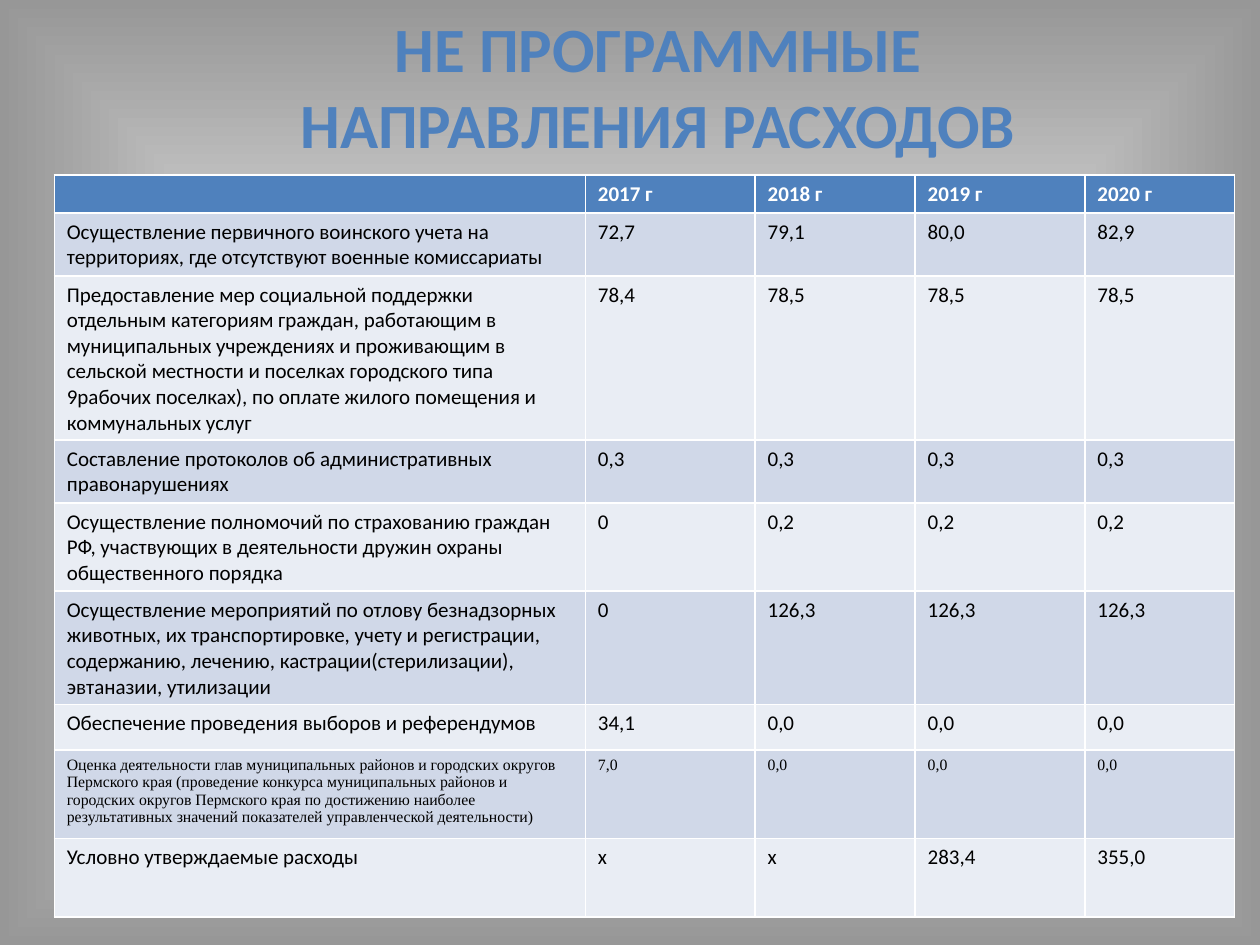
from lxml import etree
from pptx import Presentation
from pptx.dml.color import RGBColor
from pptx.enum.text import MSO_ANCHOR, PP_ALIGN
from pptx.oxml.ns import qn
from pptx.util import Pt

MIDDLE = MSO_ANCHOR.MIDDLE
CENTER = PP_ALIGN.CENTER
WHITE = RGBColor(0xFF, 0xFF, 0xFF)
BLACK = RGBColor(0x00, 0x00, 0x00)
GRAY = RGBColor(0x97, 0x97, 0x97)
BLUE = RGBColor(0x4F, 0x81, 0xBD)
BAND_DARK = RGBColor(0xD0, 0xD8, 0xE8)
BAND_LIGHT = RGBColor(0xE9, 0xED, 0xF4)

HEADER = ["", "2017 г", "2018 г", "2019 г", "2020 г"]
EXPENSES = [
    ["Осуществление первичного воинского учета на территориях, где отсутствуют "
     "военные комиссариаты", "72,7", "79,1", "80,0", "82,9"],
    ["Предоставление мер социальной поддержки отдельным категориям граждан, "
     "работающим в муниципальных учреждениях и проживающим в сельской местности "
     "и поселках городского типа 9рабочих поселках), по оплате жилого помещения "
     "и коммунальных услуг", "78,4", "78,5", "78,5", "78,5"],
    ["Составление протоколов об административных правонарушениях",
     "0,3", "0,3", "0,3", "0,3"],
    ["Осуществление полномочий по страхованию граждан РФ, участвующих в "
     "деятельности дружин охраны общественного порядка", "0", "0,2", "0,2", "0,2"],
    ["Осуществление мероприятий по отлову безнадзорных животных, их "
     "транспортировке, учету и регистрации, содержанию, лечению, "
     "кастрации(стерилизации), эвтаназии, утилизации",
     "0", "126,3", "126,3", "126,3"],
    ["Обеспечение проведения выборов и референдумов", "34,1", "0,0", "0,0", "0,0"],
    ["Оценка деятельности глав муниципальных районов и городских округов Пермского "
     "края (проведение конкурса муниципальных районов и городских округов Пермского "
     "края по достижению наиболее результативных значений показателей "
     "управленческой деятельности)", "7,0", "0,0", "0,0", "0,0"],
    ["Условно утверждаемые расходы", "х", "х", "283,4", "355,0"],
]
SMALL_ROW = 7
COL_WIDTHS = [303.5, 97, 91.5, 97, 85.5]
ROW_HEIGHTS = [21, 35, 90, 35, 49, 63, 26, 49, 45]


def add_text(p, text, size=12, font="Calibri", color=BLACK, bold=False):
    r = p.add_run()
    r.text = text
    r.font.size = Pt(size)
    r.font.name = font
    r.font.color.rgb = color
    r.font.bold = bold


prs = Presentation()
prs.slide_width = Pt(720)
prs.slide_height = Pt(540)
s = prs.slides.add_slide(prs.slide_layouts[6])

fill = s.background.fill
fill.gradient()
for stop, color in zip(fill.gradient_stops, (WHITE, GRAY)):
    stop.color.rgb = color
lin = next(s.background._cSld.iter(qn("a:lin")))
shade = etree.Element(qn("a:path"), path="shape")
etree.SubElement(shade, qn("a:fillToRect"), l="50000", t="50000", r="50000", b="50000")
lin.getparent().replace(lin, shade)

title = s.shapes.add_textbox(Pt(60), Pt(21), Pt(648), Pt(55.5))
tf = title.text_frame
tf.word_wrap = True
tf.vertical_anchor = MIDDLE
p = tf.paragraphs[0]
p._p.get_or_add_pPr().set("marR", str(Pt(16)))
add_text(p, "НЕ ПРОГРАММНЫЕ", size=36, color=BLUE, bold=True)
add_text(tf.add_paragraph(), "НАПРАВЛЕНИЯ РАСХОДОВ", size=36, color=BLUE, bold=True)
for p in tf.paragraphs:
    p.alignment = CENTER

rows = [HEADER] + EXPENSES
table = s.shapes.add_table(len(rows), len(HEADER), Pt(31), Pt(100),
                           Pt(sum(COL_WIDTHS)), Pt(sum(ROW_HEIGHTS))).table
for col, width in zip(table.columns, COL_WIDTHS):
    col.width = Pt(width)
for i, (values, height) in enumerate(zip(rows, ROW_HEIGHTS)):
    table.rows[i].height = Pt(height)
    if i == 0:
        band, style = BLUE, dict(color=WHITE, bold=True)
    else:
        band, style = (BAND_DARK if i % 2 else BAND_LIGHT), {}
    if i == SMALL_ROW:
        style = dict(size=9, font="Times New Roman")
    for j, value in enumerate(values):
        cell = table.cell(i, j)
        cell.fill.solid()
        cell.fill.fore_color.rgb = band
        p = cell.text_frame.paragraphs[0]
        if value:
            add_text(p, value, **style)
        else:
            etree.SubElement(p._p, qn("a:endParaRPr"), sz="1200")

prs.save("out.pptx")
